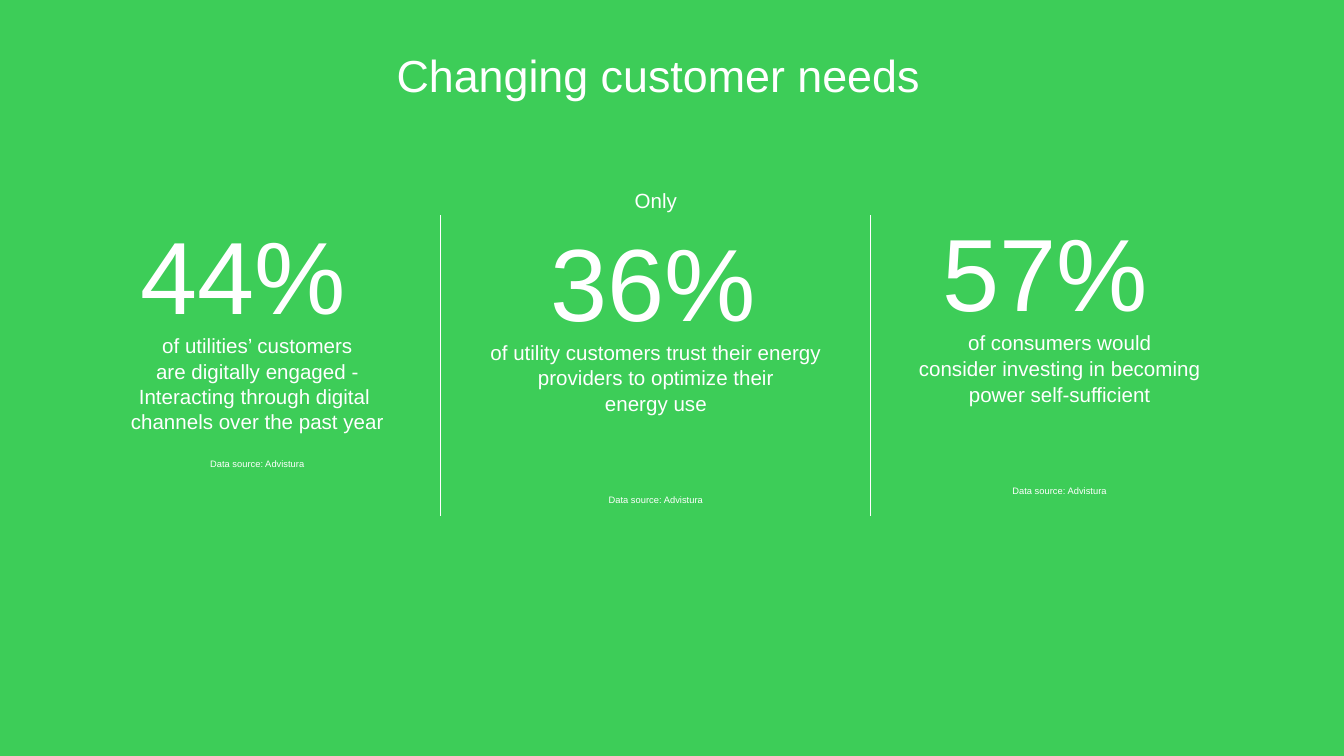
from dataclasses import dataclass

from lxml.etree import SubElement
from pptx import Presentation
from pptx.dml.color import RGBColor
from pptx.enum.shapes import MSO_CONNECTOR as Connector
from pptx.enum.text import MSO_ANCHOR as Anchor, MSO_AUTO_SIZE as AutoSize, PP_ALIGN as Align
from pptx.oxml.ns import qn
from pptx.util import Pt

GREEN = RGBColor(0x3D, 0xCD, 0x58)
WHITE = RGBColor(0xFF, 0xFF, 0xFF)
SOURCE = "Data source: Advistura"


@dataclass
class StatSlide:
    slide: object
    font: str = "Arial"
    color: RGBColor = WHITE
    figure_size: float = 55
    body_size: float = 11
    source_size: float = 5
    tight: float = 0.7
    line_gap: float = 0.55

    def background(self, color):
        fill = self.slide.background.fill
        fill.solid()
        fill.fore_color.rgb = color

    def frame(self, shape, inset):
        frame = shape.text_frame
        frame.word_wrap = True
        frame.auto_size = AutoSize.NONE
        frame.vertical_anchor = Anchor.TOP
        frame.margin_left = frame.margin_right = frame.margin_bottom = 0
        frame.margin_top = Pt(inset)
        return frame

    def paragraph(self, frame, runs, spacing=1.0, before=0):
        first = frame.paragraphs[0]
        paragraph = frame.add_paragraph() if first.runs else first
        paragraph.alignment = Align.CENTER
        paragraph.line_spacing = spacing
        paragraph.space_before = Pt(before)
        for text, size in runs:
            for index, line in enumerate(text.split("\n")):
                if index:
                    paragraph.add_line_break()
                run = paragraph.add_run()
                run.text = line
                run.font.name = self.font
                run.font.size = Pt(size)
                run.font.color.rgb = self.color

    def title(self, text, left, top, width, height):
        title = self.slide.shapes.title
        title.left, title.top, title.width, title.height = map(Pt, (left, top, width, height))
        self.paragraph(self.frame(title, 3), [(text, 24)])

    def stat(self, box, inset, figure, lines, source_gap, lead=None):
        frame = self.frame(self.slide.shapes.add_textbox(*map(Pt, box)), inset)
        if lead:
            self.paragraph(frame, [(lead, self.body_size)], self.tight)
            figure_runs = [(figure, self.figure_size), (" ", self.body_size)]
        else:
            figure_runs = [(figure + " ", self.figure_size)]
        self.paragraph(frame, figure_runs, self.tight, 21.6 if lead else 0)
        for line in lines:
            self.paragraph(frame, [(line, self.body_size)], before=self.line_gap)
        self.paragraph(frame, [(SOURCE, self.source_size)], before=source_gap)

    def divider(self, x, top, bottom):
        divider = self.slide.shapes.add_connector(
            Connector.STRAIGHT, Pt(x), Pt(top), Pt(x), Pt(bottom))
        divider.line.color.rgb = self.color
        divider.line.width = Pt(0.5)
        SubElement(divider._element.spPr, qn("a:effectLst"))


def main():
    deck = Presentation()
    deck.slide_width, deck.slide_height = Pt(720), Pt(405)
    page = StatSlide(deck.slides.add_slide(deck.slide_layouts[5]))
    page.background(GREEN)
    page.title("Changing customer needs", 31, 22.3, 643, 28.8)

    page.stat((31.7, 128.9, 212.4, 132.5), 2.75, "44%", [
        "of utilities’ customers",
        "are digitally engaged -",
        "Interacting through digital \nchannels over the past year",
    ], 13.3)
    page.stat((236.2, 82.1, 230.4, 181.4), 22.3, "36%", [
        "of utility customers trust their energy",
        "providers to optimize their",
        "energy use",
    ], 42.2, lead="Only")
    page.stat((461.5, 127.4, 212.4, 135.4), 2.75, "57%", [
        "of consumers would",
        "consider investing in becoming",
        "power self-sufficient",
    ], 42.2)

    for x in (236.2, 466.6):
        page.divider(x, 115.2, 276.5)
    deck.save("out.pptx")


if __name__ == "__main__":
    main()
